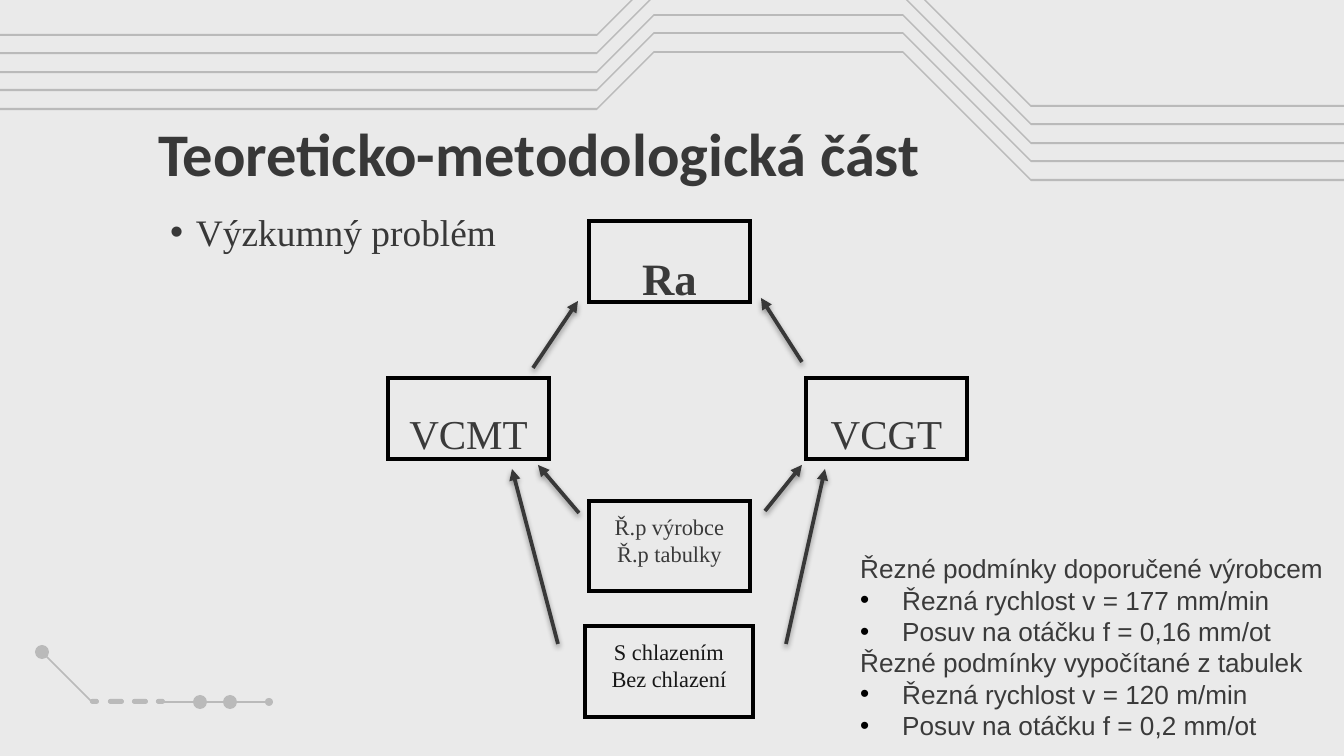
from lxml.etree import SubElement
from pptx import Presentation
from pptx.dml.color import RGBColor
from pptx.enum.shapes import MSO_CONNECTOR, MSO_SHAPE
from pptx.enum.text import MSO_ANCHOR, MSO_AUTO_SIZE, PP_ALIGN
from pptx.oxml.ns import qn
from pptx.util import Pt

PX = 914400 / 134.4
BACKGROUND = RGBColor(0xEA, 0xEA, 0xEA)
CIRCUIT = RGBColor(0xBA, 0xBA, 0xBA)
DARK = RGBColor(0x38, 0x38, 0x38)
TEXT = RGBColor(0x3A, 0x3A, 0x3A)
INK = RGBColor(0x17, 0x17, 0x17)
BLACK = RGBColor(0, 0, 0)
SERIF = "Times New Roman"


def px(*lengths):
    return [round(length * PX) for length in lengths]


def place(shape, box):
    shape.left, shape.top, shape.width, shape.height = px(*box)


def set_font(para, name, size, color, bold=False):
    font = para.font
    font.name, font.size, font.bold = name, Pt(size), bold
    font.color.rgb = color


def set_margins(frame, left, top, right, bottom):
    frame.margin_left, frame.margin_top, frame.margin_right, frame.margin_bottom = px(
        left, top, right, bottom)


def add_bullet(para, margin, hanging, color):
    properties = para._p.get_or_add_pPr()
    left, indent = px(margin, -hanging)
    properties.set("marL", str(left))
    properties.set("indent", str(indent))
    bullet_color = SubElement(properties, qn("a:buClr"))
    SubElement(bullet_color, qn("a:srgbClr"), val=str(color))
    SubElement(properties, qn("a:buFont"), typeface="Arial")
    SubElement(properties, qn("a:buChar"), char="•")


def paint(shape, color):
    shape.shadow.inherit = False
    shape.fill.solid()
    shape.fill.fore_color.rgb = color
    shape.line.fill.background()


def add_line(page, start, end, color, width):
    line = page.shapes.add_connector(MSO_CONNECTOR.STRAIGHT, *px(*start, *end))
    line.line.color.rgb = color
    line.line.width = Pt(width)
    effects = SubElement(line._element.spPr, qn("a:effectLst"))
    return line, effects


def add_arrow(page, start, end):
    arrow, effects = add_line(page, start, end, DARK, 2)
    SubElement(arrow.line._get_or_add_ln(), qn("a:tailEnd"), type="triangle")
    shadow = SubElement(effects, qn("a:outerShdw"), blurRad=str(Pt(3.1)),
                        dist=str(Pt(1.6)), dir="5400000", rotWithShape="0")
    color = SubElement(shadow, qn("a:srgbClr"), val="000000")
    SubElement(color, qn("a:alpha"), val="38000")


def add_header_tracks(page, left, top):
    bends = [(0, 57), (828, 57), (885, 0), (1134, 0), (1262, 128), (1575, 128)]
    for track in range(5):
        track_top = top - round(18.6 * track)
        upper = [(left + x, track_top + y) for x, y in bends]
        lower = [(x, y + 2) for x, y in reversed(upper)]
        builder = page.shapes.build_freeform(*upper[0], scale=PX)
        builder.add_line_segments(upper[1:] + lower, close=True)
        paint(builder.convert_to_shape(), CIRCUIT)


def add_footer_circuit(page, left, top):
    for start, end in [((7, 7), (57, 57)), ((128, 57), (235, 57))]:
        add_line(page, (left + start[0], top + start[1]),
                 (left + end[0], top + end[1]), CIRCUIT, 0.8)
    dots = [(0, 0, 14), (158, 50, 14), (188, 50, 14), (230, 53, 8)]
    dashes = [(55, 9), (73, 16), (97, 16), (121, 9)]
    parts = [(MSO_SHAPE.OVAL, x, y, size, size) for x, y, size in dots]
    parts += [(MSO_SHAPE.ROUNDED_RECTANGLE, x, 54, width, 5) for x, width in dashes]
    for kind, x, y, width, height in parts:
        part = page.shapes.add_shape(kind, *px(left + x, top + y, width, height))
        paint(part, CIRCUIT)
        if kind == MSO_SHAPE.ROUNDED_RECTANGLE:
            part.adjustments[0] = 0.5


def add_headings(page, title_box, body_box):
    title, body = page.shapes.title, page.placeholders[1]
    for holder, box, anchor in [
            (title, title_box, MSO_ANCHOR.BOTTOM), (body, body_box, MSO_ANCHOR.TOP)]:
        place(holder, box)
        frame = holder.text_frame
        frame.word_wrap = True
        frame.auto_size = MSO_AUTO_SIZE.NONE
        frame.vertical_anchor = anchor
        set_margins(frame, 13, 14, 13, 14)
    title.text_frame.text = "Teoreticko-metodologická část"
    body.text_frame.text = "Výzkumný problém"
    heading, topic = title.text_frame.paragraphs[0], body.text_frame.paragraphs[0]
    add_bullet(topic, 47, 26, DARK)
    for para in (heading, topic):
        para.alignment = PP_ALIGN.LEFT
        para.space_before = Pt(0)
    set_font(heading, "Calibri", 32.4, DARK, True)
    set_font(topic, SERIF, 20, DARK)


def add_node(page, box, lines, size, color, top_margin, bold=False):
    node = page.shapes.add_shape(MSO_SHAPE.RECTANGLE, *px(*box))
    node.shadow.inherit = False
    node.fill.background()
    node.line.color.rgb = BLACK
    node.line.width = Pt(2)
    SubElement(node.line._get_or_add_ln(), qn("a:miter"), lim="800000")
    frame = node.text_frame
    frame.word_wrap = True
    frame.vertical_anchor = MSO_ANCHOR.TOP
    set_margins(frame, 13, top_margin, 13, 0)
    frame.text = "\n".join(lines)
    for para in frame.paragraphs:
        para.alignment = PP_ALIGN.CENTER
        set_font(para, SERIF, size, color, bold)


def add_diagram(page, left, top):
    arrows = [
        (145, 147, 190, 80), (414, 141, 373, 77), (377, 290, 414, 244),
        (191, 292, 150, 244), (170, 423, 124, 248), (398, 423, 437, 248),
    ]
    for x1, y1, x2, y2 in arrows:
        add_arrow(page, (left + x1, top + y1), (left + x2, top + y2))
    nodes = [
        ((201, 0, 161, 81), ["Ra"], 24, TEXT, 30, True),
        ((0, 157, 161, 81), ["VCMT"], 22, TEXT, 30),
        ((418, 157, 161, 81), ["VCGT"], 22, TEXT, 30),
        ((201, 280, 161, 90), ["Ř.p výrobce", "Ř.p tabulky"], 12, TEXT, 12),
        ((197, 405, 168, 91), ["S chlazením", "Bez chlazení"], 12, INK, 12),
    ]
    for (x, y, width, height), *style in nodes:
        add_node(page, (left + x, top + y, width, height), *style)


def add_conditions(page, box):
    groups = [
        ("Řezné podmínky doporučené výrobcem",
         ["Řezná rychlost v = 177 mm/min", "Posuv na otáčku f = 0,16 mm/ot"]),
        ("Řezné podmínky vypočítané z tabulek",
         ["Řezná rychlost v = 120 m/min", "Posuv na otáčku f = 0,2 mm/ot"]),
    ]
    frame = page.shapes.add_textbox(*px(*box)).text_frame
    frame.word_wrap = True
    frame.text = "\n".join(line for label, items in groups for line in [label, *items])
    labels = [label for label, items in groups]
    for para in frame.paragraphs:
        if para.text not in labels:
            add_bullet(para, 42, 42, BLACK)
        set_font(para, "Arial", 14, TEXT)


def main():
    deck = Presentation()
    deck.slide_width, deck.slide_height = px(1344, 756)
    page = deck.slides.add_slide(deck.slide_layouts[0])
    page.background.fill.solid()
    page.background.fill.fore_color.rgb = BACKGROUND
    add_header_tracks(page, -231, 51)
    add_footer_circuit(page, 35, 645)
    add_headings(page, (145, 118, 1000, 85), (136, 195, 907, 63))
    add_diagram(page, 388, 221)
    add_conditions(page, (847, 546, 501, 254))
    deck.save("out.pptx")


if __name__ == "__main__":
    main()
